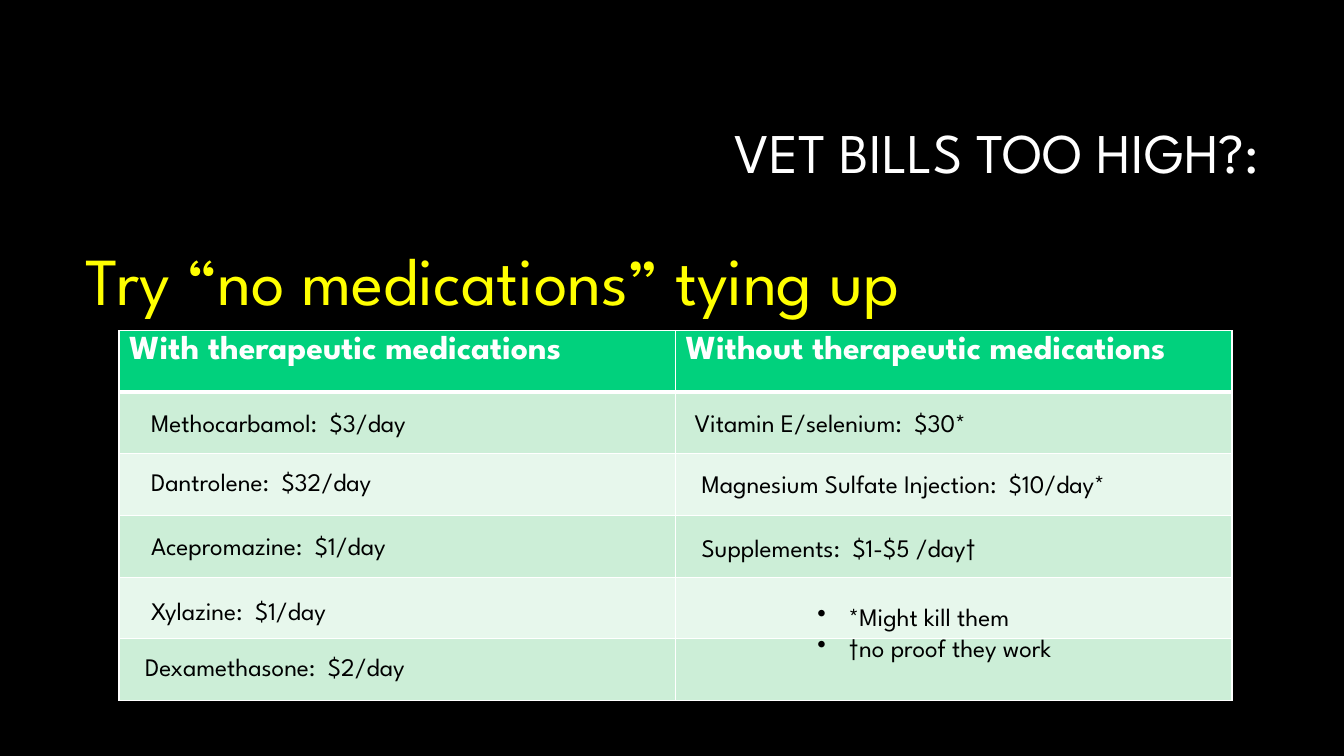
from lxml.etree import SubElement
from pptx import Presentation
from pptx.dml.color import RGBColor
from pptx.enum.text import MSO_ANCHOR, MSO_AUTO_SIZE, PP_ALIGN
from pptx.oxml.ns import qn
from pptx.util import Inches, Pt

FONT = "League Spartan"
BLACK, WHITE, YELLOW = "000000", "FFFFFF", "FFFF00"
GREEN, MINT, PALE = "01D17D", "CCEED7", "E7F7EC"


def color(code):
    return RGBColor.from_string(code)


class Deck:
    """Style and current slide."""

    def __init__(self):
        self.prs = Presentation()
        self.prs.slide_width = Inches(13.33)
        self.prs.slide_height = Inches(7.5)
        self.slide = self.prs.slides.add_slide(self.prs.slide_layouts[1])
        fill = self.slide.background.fill
        fill.solid()
        fill.fore_color.rgb = color(BLACK)

    def style(self, para, size, code, bold=False):
        for run in para.runs:
            font = run.font
            font.name, font.size, font.bold = FONT, Pt(size), bold
            font.color.rgb = color(code)

    def bullet(self, para, mark=None, indent=0):
        props = para._p.get_or_add_pPr()
        props.set("marL", str(Inches(indent)))
        props.set("indent", str(-Inches(indent)))
        if mark:
            SubElement(props, qn("a:buChar"), char=mark)
        else:
            SubElement(props, qn("a:buNone"))

    def holder(self, index, box, text, size, code, align, anchor):
        shape = self.slide.placeholders[index]
        shape.left, shape.top, shape.width, shape.height = map(Inches, box)
        frame = shape.text_frame
        frame.text = text
        frame.word_wrap = True
        frame.auto_size = MSO_AUTO_SIZE.NONE
        frame.vertical_anchor = anchor
        para = frame.paragraphs[0]
        para.alignment = align
        para.line_spacing = 0.9
        para.space_before = Pt(0)
        self.bullet(para)
        self.style(para, size, code)

    def label(self, box, lines, mark=None):
        shape = self.slide.shapes.add_textbox(*map(Inches, box))
        frame = shape.text_frame
        frame.text = "\n".join(lines)
        frame.word_wrap = mark is not None
        frame.auto_size = MSO_AUTO_SIZE.SHAPE_TO_FIT_TEXT
        for para in frame.paragraphs:
            if mark:
                self.bullet(para, mark, 0.31)
            self.style(para, 18, BLACK)

    def border(self, cell, widths):
        props = cell._tc.get_or_add_tcPr()
        for side, width in zip("LRTB", widths):
            line = SubElement(props, qn("a:ln" + side), w=str(Pt(width)))
            fill = SubElement(line, qn("a:solidFill"))
            SubElement(fill, qn("a:srgbClr"), val=WHITE)

    def table(self, box, heads, rows):
        shape = self.slide.shapes.add_table(rows, len(heads), *map(Inches, box))
        grid = shape.table
        for row in range(rows):
            for col, head in enumerate(heads):
                cell = grid.cell(row, col)
                top = 3 if row == 1 else 1
                base = 3 if row == 0 else 1
                self.border(cell, (1, 1, top, base))
                cell.fill.solid()
                shade = MINT if row % 2 else PALE
                cell.fill.fore_color.rgb = color(shade if row else GREEN)
                if row == 0:
                    cell.text_frame.text = head
                    self.style(cell.text_frame.paragraphs[0], 24, WHITE, True)


def main():
    deck = Deck()

    # Title and lead line
    deck.holder(0, (3.17, 0.84, 9.42, 1.41), "VET BILLS TOO HIGH?:",
                40, WHITE, PP_ALIGN.RIGHT, MSO_ANCHOR.MIDDLE)
    deck.holder(1, (0.75, 2.4, 12.09, 4.4), "Try “no medications” tying up",
                48, YELLOW, PP_ALIGN.LEFT, MSO_ANCHOR.TOP)

    # Cost table
    heads = ("With therapeutic medications", "Without therapeutic medications")
    deck.table((1.18, 3.28, 11.04, 3.67), heads, 6)

    # Prices laid over the rows
    prices = (
        (1.4, 3.99, 3.29, "Methocarbamol:  $3/day"),
        (1.4, 4.58, 2.8, "Dantrolene:  $32/day"),
        (1.4, 5.21, 3.1, "Acepromazine:  $1/day"),
        (1.4, 5.86, 2.27, "Xylazine:  $1/day"),
        (1.34, 6.41, 3.32, "Dexamethasone:  $2/day"),
        (6.79, 3.99, 3.33, "Vitamin E/selenium:  $30*"),
        (6.86, 4.6, 4.98, "Magnesium Sulfate Injection:  $10/day*"),
        (6.86, 5.23, 3.44, "Supplements:  $1-$5 /day†"),
    )
    for left, top, width, text in prices:
        deck.label((left, top, width, 0.4), [text])

    # Footnotes
    notes = ["*Might kill them", "†no proof they work"]
    deck.label((8.01, 5.92, 3.1, 0.71), notes, "•")

    deck.prs.save("out.pptx")


if __name__ == "__main__":
    main()
